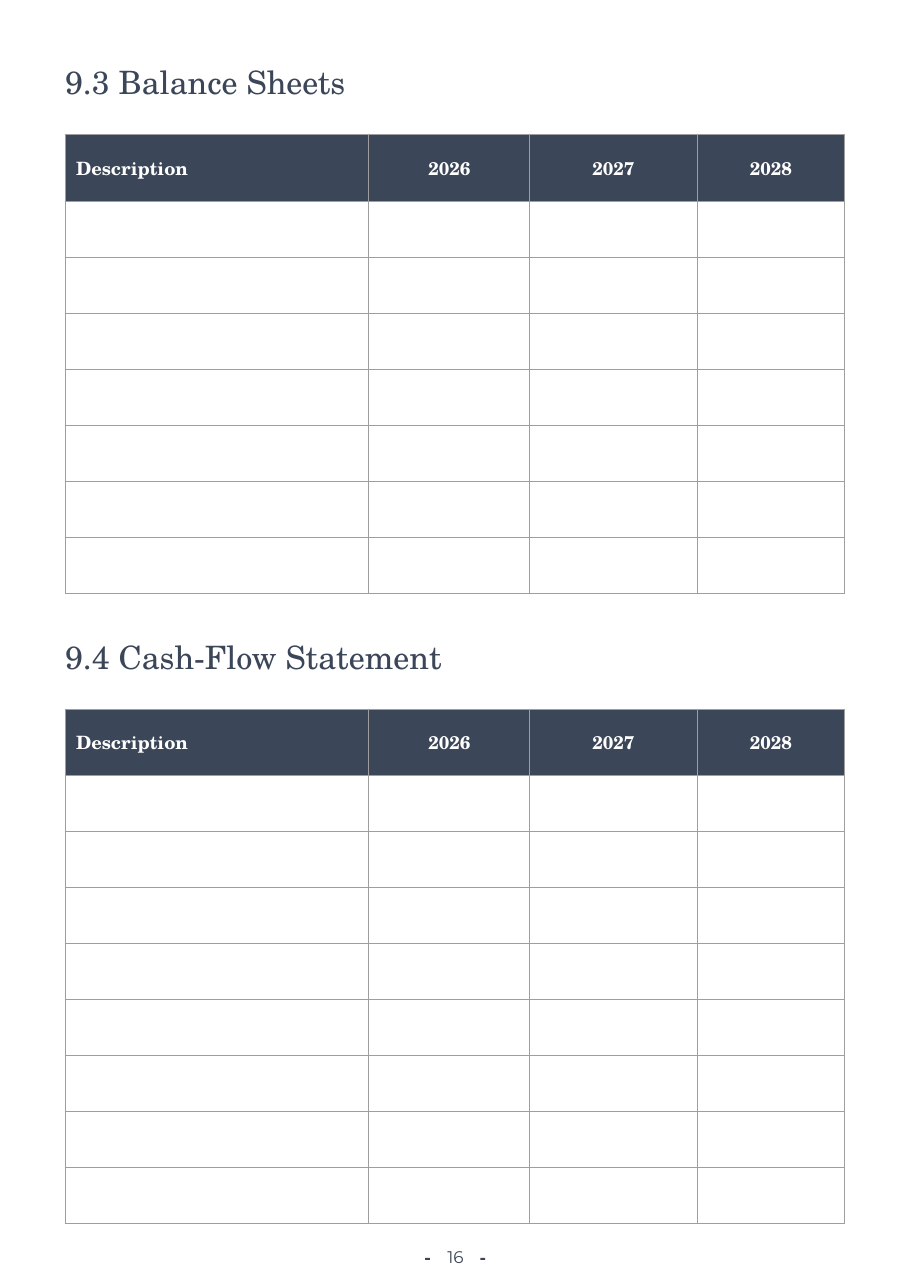
from dataclasses import dataclass

from lxml import etree
from pptx import Presentation
from pptx import util as u
from pptx.dml import color
from pptx.enum import shapes, text
from pptx.oxml import ns


@dataclass(frozen=True)
class Theme:
    navy: str = "3B4658"
    white: str = "FFFFFF"
    grid: str = "9E9E9E"
    serif: str = "TeX Gyre Schola"
    sans: str = "Montserrat"
    heading_size: float = 21
    header_size: float = 12
    page_size: float = 11
    grid_width: float = 0.75


class Page:
    """Holds the theme and the slide being built."""

    def __init__(self, slide, theme):
        self.slide = slide
        self.theme = theme

    def add_run(self, paragraph, words, size, font, rgb, bold=False):
        run = paragraph.add_run()
        run.text = words
        run.font.size = u.Pt(size)
        run.font.name = font
        run.font.bold = bold
        run.font.color.rgb = color.RGBColor.from_string(rgb)

    def add_text(self, parent, box, words, size, font, align):
        frame = parent.add_textbox(*map(u.Pt, box)).text_frame
        frame.word_wrap = True
        frame.margin_left = frame.margin_right = 0
        frame.margin_top = frame.margin_bottom = 0
        paragraph = frame.paragraphs[0]
        paragraph.alignment = align
        self.add_run(paragraph, words, size, font, self.theme.navy)

    def add_heading(self, left, top, width, words):
        self.add_text(self.slide.shapes, (left, top, width, 25.2), words,
                      self.theme.heading_size, self.theme.serif, text.PP_ALIGN.LEFT)

    def add_borders(self, cell):
        properties = cell._tc.get_or_add_tcPr()
        for side in ("lnL", "lnR", "lnT", "lnB"):
            line = etree.SubElement(properties, ns.qn(f"a:{side}"),
                                    w=str(u.Pt(self.theme.grid_width)))
            fill = etree.SubElement(line, ns.qn("a:solidFill"))
            etree.SubElement(fill, ns.qn("a:srgbClr"), val=self.theme.grid)

    def add_header_cell(self, cell, words, align):
        cell.fill.solid()
        cell.fill.fore_color.rgb = color.RGBColor.from_string(self.theme.navy)
        cell.vertical_anchor = text.MSO_ANCHOR.MIDDLE
        cell.margin_left = cell.margin_right = u.Pt(7.2)
        cell.margin_top = cell.margin_bottom = u.Pt(7.2)
        paragraph = cell.text_frame.paragraphs[0]
        paragraph.alignment = align
        self.add_run(paragraph, words, self.theme.header_size, self.theme.serif,
                     self.theme.white, bold=True)

    def add_statement_table(self, left, top, headers, widths, header_height,
                            row_height, empty_rows):
        heights = [header_height] + [row_height] * empty_rows
        table = self.slide.shapes.add_table(
            len(heights), len(widths), u.Pt(left), u.Pt(top),
            u.Pt(sum(widths)), u.Pt(sum(heights))).table
        table.first_row = table.horz_banding = False
        for column, width in zip(table.columns, widths):
            column.width = u.Pt(width)
        for row, height in zip(table.rows, heights):
            row.height = u.Pt(height)
        for cell in table.iter_cells():
            self.add_borders(cell)
            cell.fill.background()
        for index, words in enumerate(headers):
            align = text.PP_ALIGN.CENTER if index else text.PP_ALIGN.LEFT
            self.add_header_cell(table.cell(0, index), words, align)

    def add_dash(self, parent, left, top):
        dash = parent.add_shape(shapes.MSO_SHAPE.RECTANGLE, u.Pt(left), u.Pt(top),
                                u.Pt(3.2), u.Pt(1.3))
        dash.shadow.inherit = False
        dash.fill.solid()
        dash.fill.fore_color.rgb = color.RGBColor.from_string(self.theme.navy)
        dash.line.fill.background()

    def add_page_number(self, number):
        group = self.slide.shapes.add_group_shape().shapes
        self.add_text(group, (285.1, 815, 25.2, 13.7), number, self.theme.page_size,
                      self.theme.sans, text.PP_ALIGN.CENTER)
        for left in (277.8, 313.9):
            self.add_dash(group, left, 822)


def main():
    presentation = Presentation()
    presentation.slide_width = u.Pt(595.44)
    presentation.slide_height = u.Pt(841.68)
    slide = presentation.slides.add_slide(presentation.slide_layouts[6])
    page = Page(slide, Theme())

    # Statements: heading, heading top, table top, empty rows
    statements = [
        ("9.3 Balance Sheets", 41, 87.9, 7),
        ("9.4 Cash-Flow Statement", 416.4, 463.4, 8),
    ]
    left = 42.5
    headers = ["Description", "2026", "2027", "2028"]
    widths = [198.7, 105.1, 109.4, 96.5]
    for heading, heading_top, table_top, empty_rows in statements:
        page.add_heading(left, heading_top, sum(widths), heading)
        page.add_statement_table(left, table_top, headers, widths, 43.5, 36.6,
                                 empty_rows)

    # Footer
    page.add_page_number("16")

    presentation.save("out.pptx")


if __name__ == "__main__":
    main()
